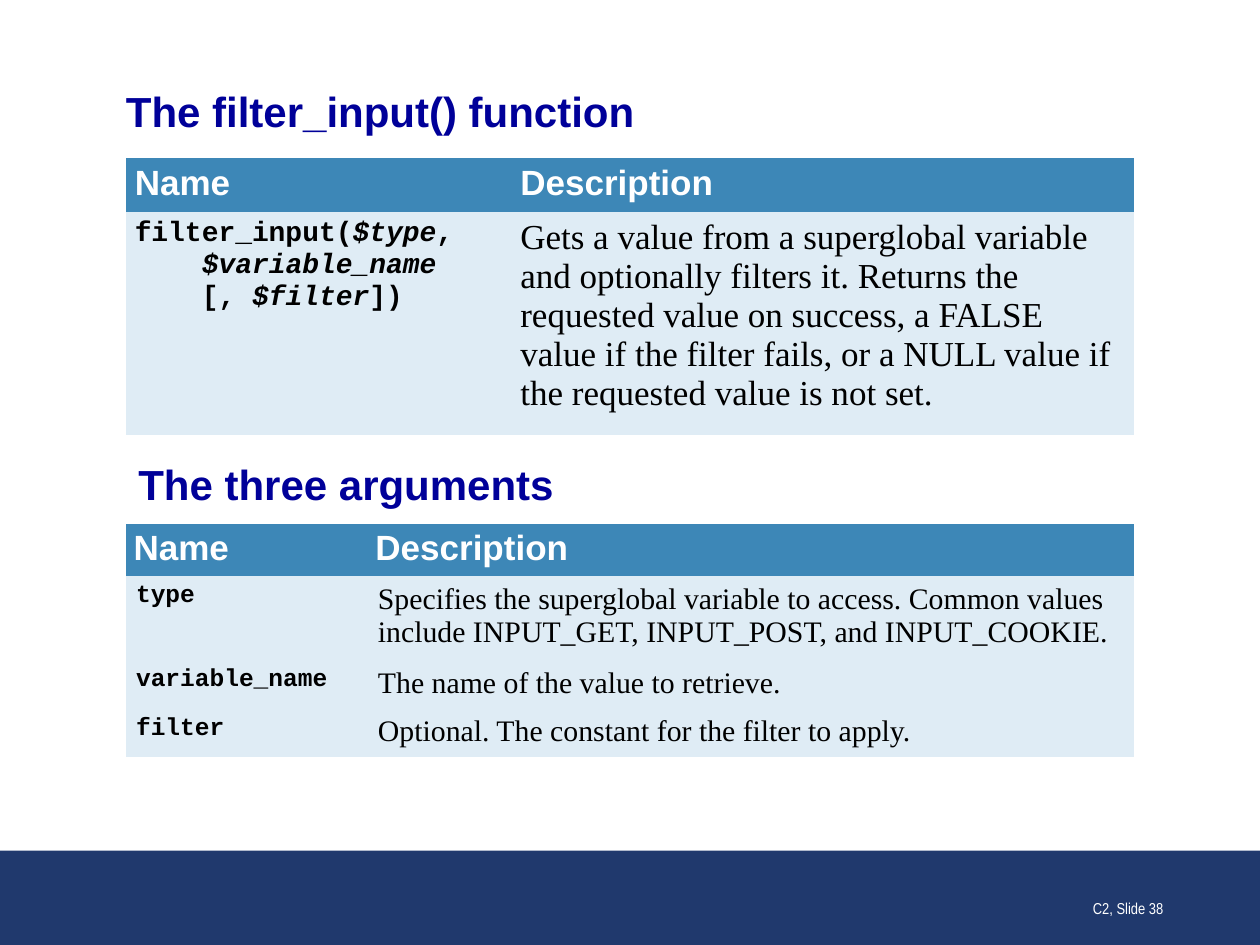
import copy

import pptx
import pptx.dml.color
import pptx.enum.shapes
import pptx.enum.text
import pptx.oxml.ns
import pptx.util

Inches = pptx.util.Inches
Pt = pptx.util.Pt
ANCHOR = pptx.enum.text.MSO_ANCHOR
ALIGN = pptx.enum.text.PP_ALIGN

COLORS = {
    "heading": "000099",
    "header": "3D87B7",
    "body": "DFECF5",
    "footer": "20396D",
    "text": "000000",
    "light": "FFFFFF",
}
PLAIN_TABLE_STYLE = "{2D5ABB26-0587-4C30-8999-92F81FD0307C}"
HEADER, CODE, PROSE = "Arial", "Courier New", "Times New Roman"


class SlideBuilder:
    def __init__(self, page):
        self.page = page

    def color(self, name):
        return pptx.dml.color.RGBColor.from_string(COLORS[name])

    def style(self, span, font, size, color, bold=False, italic=False):
        span.font.name = font
        span.font.size = Pt(size)
        span.font.color.rgb = self.color(color)
        span.font.bold = bold
        span.font.italic = italic

    def band(self, left, top, width, height, color):
        band = self.page.shapes.add_shape(
            pptx.enum.shapes.MSO_SHAPE.RECTANGLE,
            Inches(left), Inches(top), Inches(width), Inches(height))
        band.shadow.inherit = False
        band.fill.solid()
        band.fill.fore_color.rgb = self.color(color)
        band.line.fill.background()

    def text(self, area, words, font, size, color, bold=False,
             anchor=ANCHOR.TOP, align=ALIGN.LEFT, inset=None):
        box = self.page.shapes.add_textbox(*(Inches(length) for length in area))
        frame = box.text_frame
        frame.word_wrap = True
        frame.vertical_anchor = anchor
        if inset is not None:
            frame.margin_left = frame.margin_right = Inches(inset)
            frame.margin_top = frame.margin_bottom = Inches(inset)
        frame.text = words
        para = frame.paragraphs[0]
        para.alignment = align
        self.style(para.runs[0], font, size, color, bold)

    def heading(self, area, words, **options):
        self.text(area, words, HEADER, 24, "heading", bold=True, **options)

    def cell(self, cell, lines, font, size, color, fill, margins):
        """Fill a cell; each line is a list of spans, those with $ in italics."""
        cell.fill.solid()
        cell.fill.fore_color.rgb = self.color(fill)
        cell.margin_left = cell.margin_right = Inches(margins[0])
        cell.margin_top = cell.margin_bottom = Inches(margins[1])
        para = cell.text_frame.paragraphs[0]
        para.space_after = Pt(6)
        for number, line in enumerate(lines):
            if number:
                # The break takes the format of the span before it
                previous = para.runs[-1]
                para.add_line_break()
                para._p[-1].append(copy.deepcopy(previous.font._rPr))
            for words in line:
                span = para.add_run()
                span.text = words
                self.style(span, font, size, color, font != PROSE,
                           words.startswith("$"))

    def table(self, left, top, widths, heights, rows, code_size, prose_size,
              header_margins, body_margins):
        frame = self.page.shapes.add_table(
            len(heights), len(widths), Inches(left), Inches(top),
            Inches(sum(widths)), Inches(sum(heights)))
        table = frame.table
        style_id = table._tbl.tblPr.find(pptx.oxml.ns.qn("a:tableStyleId"))
        style_id.text = PLAIN_TABLE_STYLE
        for column, width in zip(table.columns, widths):
            column.width = Inches(width)
        for row, height in zip(table.rows, heights):
            row.height = Inches(height)
        # Header row
        for index, words in enumerate(("Name", "Description")):
            self.cell(table.cell(0, index), [[words]], HEADER, 20, "light",
                      "header", header_margins)
        # Code name and its description
        for index, (code, prose) in enumerate(rows, start=1):
            self.cell(table.cell(index, 0), code, CODE, code_size, "text",
                      "body", body_margins)
            self.cell(table.cell(index, 1), [[prose]], PROSE, prose_size, "text",
                      "body", body_margins)


def main():
    deck = pptx.Presentation()
    deck.slide_width, deck.slide_height = Inches(10), Inches(7.5)
    builder = SlideBuilder(deck.slides.add_slide(deck.slide_layouts[6]))

    # Footer band
    builder.band(0, 6.75, 10, 0.75, "footer")

    # Function
    builder.heading((1, 0.68, 8, 0.4), "The filter_input() function",
                    anchor=ANCHOR.MIDDLE, inset=0)
    signature = [
        ["filter_input(", "$type", ","],
        ["    ", "$variable_name"],
        ["    [, ", "$filter", "])"],
    ]
    builder.table(
        1, 1.25, (3.06, 4.94), (0.39, 1.63),
        [(signature,
          "Gets a value from a superglobal variable and optionally filters it. "
          "Returns the requested value on success, a FALSE value if the filter "
          "fails, or a NULL value if the requested value is not set.")],
        16, 20, (0.07, 0.05), (0.07, 0.05))

    # Arguments
    builder.heading((1, 3.59, 8, 0.49), "The three arguments")
    arguments = [
        ([["type"]],
         "Specifies the superglobal variable to access. Common values include "
         "INPUT_GET, INPUT_POST, and INPUT_COOKIE."),
        ([["variable_name"]], "The name of the value to retrieve."),
        ([["filter"]], "Optional. The constant for the filter to apply."),
    ]
    builder.table(1, 4.16, (1.92, 6.08), (0.38, 0.63, 0.38, 0.38), arguments,
                  14, 17, (0.06, 0.04), (0.08, 0.05))

    # Slide number
    builder.text((7.25, 6.83, 2.08, 0.5), "C2, Slide 38", "Arial Narrow", 9,
                 "light", anchor=ANCHOR.BOTTOM, align=ALIGN.RIGHT)

    deck.save("out.pptx")


if __name__ == "__main__":
    main()
